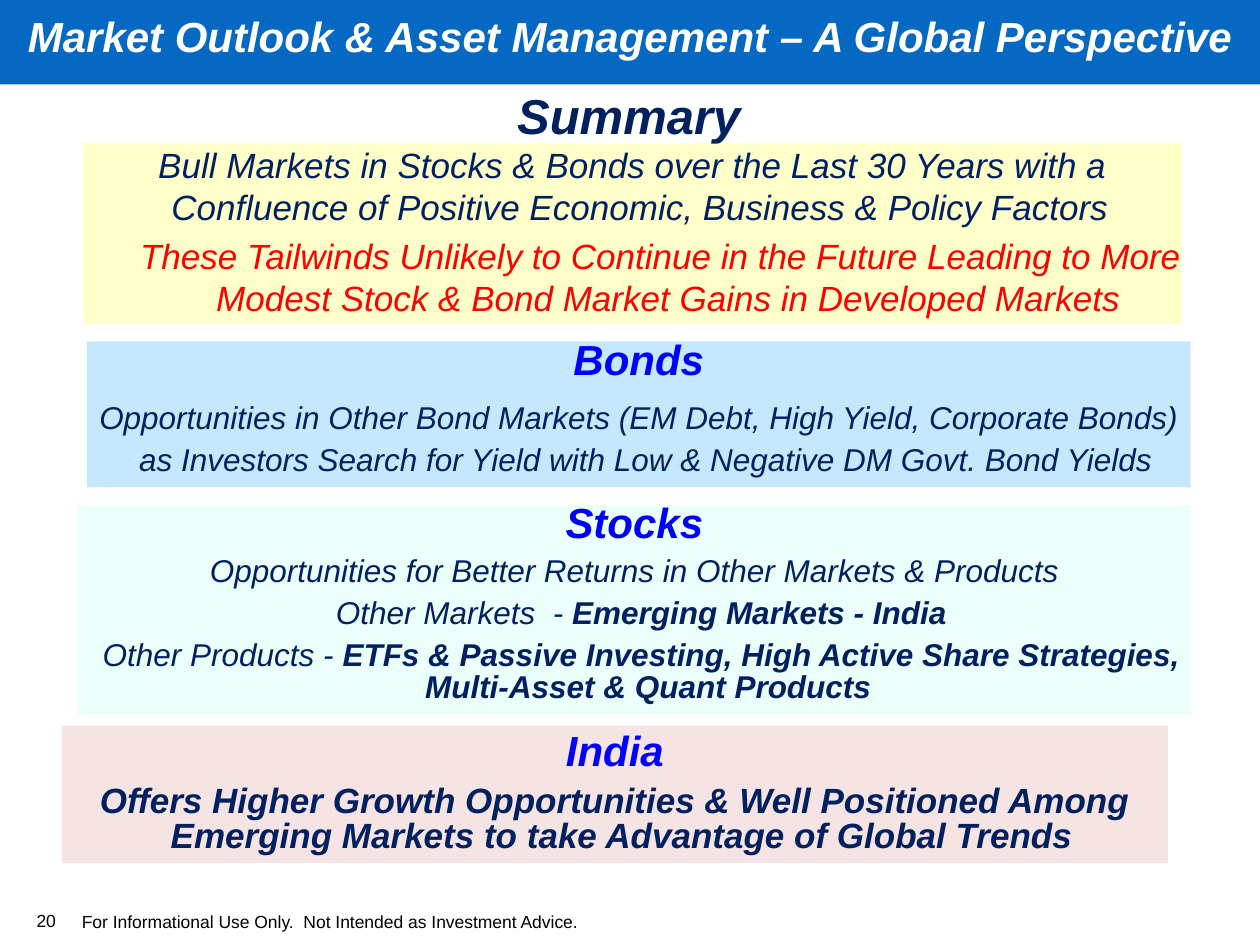
from pptx import Presentation
from pptx.dml.color import RGBColor
from pptx.enum.shapes import MSO_SHAPE
from pptx.enum.text import MSO_ANCHOR, PP_ALIGN
from pptx.util import Inches, Pt

COLUMNS, ROWS = 100, 75
NAVY, BLUE, RED, WHITE, BLACK = "002060", "0000FF", "FF0000", "FFFFFF", "000000"

deck = Presentation()
deck.slide_width, deck.slide_height = Inches(10), Inches(7.5)
page = deck.slides.add_slide(deck.slide_layouts[6])


def color(hex_text):
    return RGBColor.from_string(hex_text)


def add_box(place, fill=None, anchor=MSO_ANCHOR.TOP, top_inset=0):
    """Place is left, top, width and height in grid columns and rows."""
    column, row = deck.slide_width / COLUMNS, deck.slide_height / ROWS
    left, top, width, height = place
    frame = [int(size) for size in (left * column, top * row, width * column, height * row)]
    if fill:
        box = page.shapes.add_shape(MSO_SHAPE.RECTANGLE, *frame)
        box.shadow.inherit = False
        box.fill.solid()
        box.fill.fore_color.rgb = color(fill)
        box.line.fill.background()
    else:
        box = page.shapes.add_textbox(*frame)
    text = box.text_frame
    text.word_wrap = True
    text.vertical_anchor = anchor
    text.margin_left = text.margin_right = text.margin_bottom = 0
    text.margin_top = Inches(top_inset)
    return text


def add_para(text, *parts, size=18, ink=NAVY, bold=False, italic=True,
             align=PP_ALIGN.CENTER, line=None, before=0, indent=0, hang=0.11):
    """Each part is a string, or a pair of string and bold flag."""
    first = not text.paragraphs[0].runs
    para = text.paragraphs[0] if first else text.add_paragraph()
    para.alignment = align
    if line:
        para.line_spacing = Pt(line)
    para.space_before = Pt(0 if first else before)
    if indent:
        properties = para._p.get_or_add_pPr()
        properties.set("marL", str(Inches(indent)))
        properties.set("indent", str(-Inches(hang)))
    for part in parts:
        words, strong = (part, bold) if isinstance(part, str) else part
        span = para.add_run()
        span.text = words
        font = span.font
        font.name, font.size, font.bold, font.italic = "Arial", Pt(size), strong, italic
        font.color.rgb = color(ink)


def add_banner(place):
    text = add_box(place, "0569C3", top_inset=0.08)
    add_para(text, "Market Outlook & Asset Management – A Global Perspective",
             size=24, ink=WHITE, bold=True)


def add_summary(heading_place, panel_place):
    heading = add_box(heading_place)
    add_para(heading, "Summary", size=28, bold=True, line=30, indent=0.11)
    panel = add_box(panel_place, "FFFFC9")
    add_para(panel, "Bull Markets in Stocks & Bonds over the Last 30 Years with a "
             "Confluence of Positive Economic, Business & Policy Factors",
             size=20, line=24, indent=0.12, hang=0.12)
    add_para(panel, "These Tailwinds Unlikely to Continue in the Future Leading to More "
             "Modest Stock & Bond Market Gains in Developed Markets",
             size=20, ink=RED, line=24, before=4, indent=0.57, hang=0.12)


def add_topic(place, fill, heading, heading_line, paras, **style):
    """Paras are pairs of text parts and left indent."""
    text = add_box(place, fill)
    add_para(text, heading, size=24, ink=BLUE, bold=True, line=heading_line, indent=0.11)
    for parts, indent in paras:
        add_para(text, *parts, before=6, indent=indent, **style)


def add_footer(number_place, note_place):
    for place, words in ((number_place, "20"),
                         (note_place, "For Informational Use Only.  Not Intended as Investment Advice.")):
        text = add_box(place, anchor=MSO_ANCHOR.BOTTOM)
        add_para(text, words, size=10, ink=BLACK, italic=False, align=PP_ALIGN.LEFT)


add_banner((0, 0, COLUMNS, 6.7))
add_summary((6.3, 7.3, 87.2, 4.6), (6.6, 11.4, 87.2, 14.3))
add_topic((6.9, 27.1, 87.6, 11.6), "C5E8FF", "Bonds", 24, [
    (["Opportunities in Other Bond Markets (EM Debt, High Yield, Corporate Bonds) "
      "as Investors Search for Yield with Low & Negative DM Govt. Bond Yields"], 0.11),
], line=24)
add_topic((6.2, 40.1, 88.3, 16.6), "EBFFFB", "Stocks", 24, [
    (["Opportunities for Better Returns in Other Markets & Products"], 0.11),
    (["Other Markets  - ", ("Emerging Markets - India", True)], 0.22),
    (["Other Products - ", ("ETFs & Passive Investing, High Active Share Strategies, "
                            "Multi-Asset & Quant Products", True)], 0.22),
], line=18)
add_topic((4.9, 57.6, 87.8, 10.9), "F5E4E3", "India", 28, [
    (["Offers Higher Growth Opportunities & Well Positioned Among "
      "Emerging Markets to take Advantage of Global Trends"], 0.11),
], size=20, bold=True, line=20)
add_footer((2.9, 71.1, 4, 2.8), (6.5, 69.2, 61.4, 4.8))

deck.save("out.pptx")
